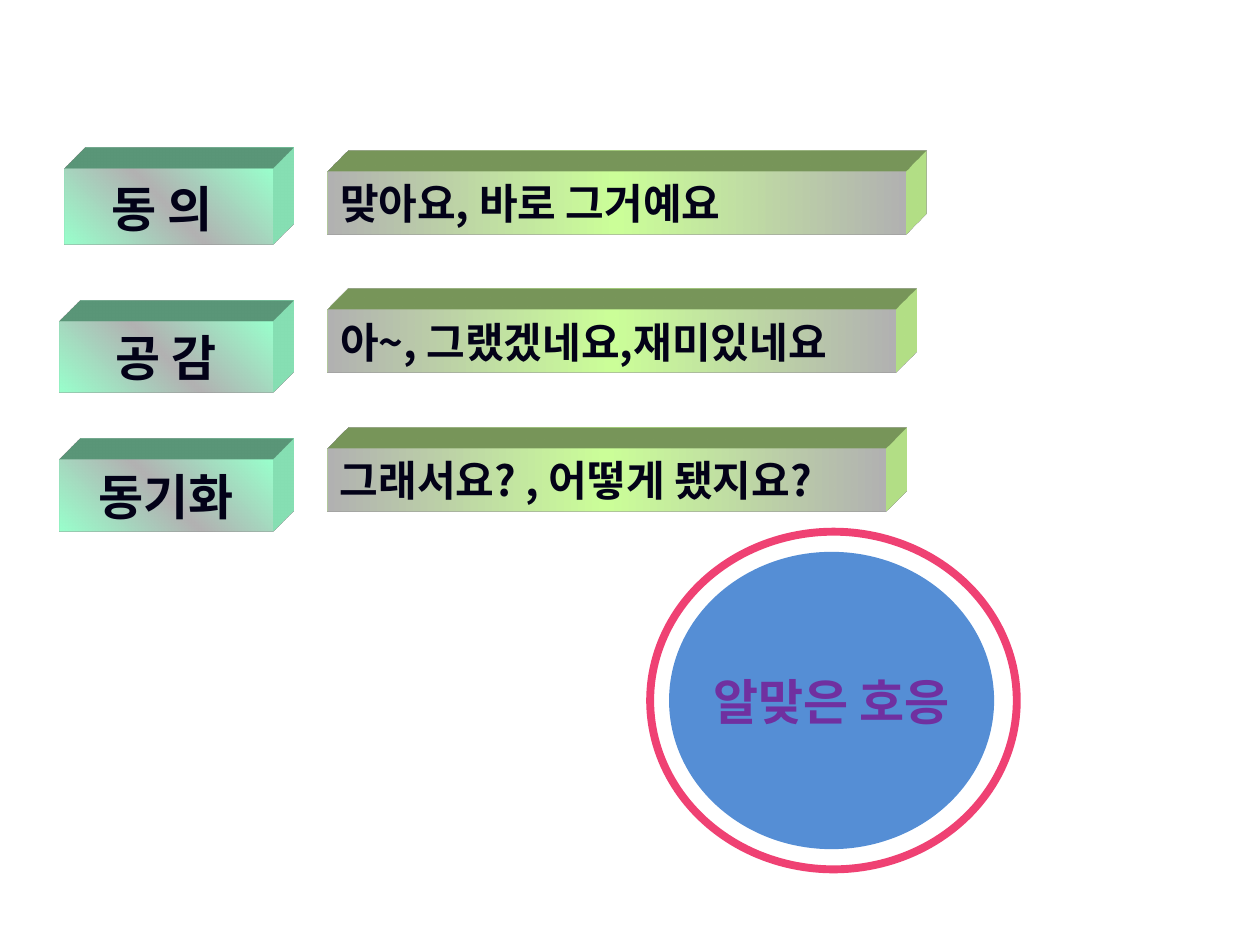
from dataclasses import dataclass

from lxml.etree import SubElement
from pptx import Presentation
from pptx.dml.color import RGBColor
from pptx.enum.shapes import MSO_SHAPE
from pptx.enum.text import MSO_ANCHOR, PP_ALIGN
from pptx.oxml import parse_xml
from pptx.oxml.ns import nsdecls, qn
from pptx.util import Inches, Pt


@dataclass(frozen=True)
class Theme:
    font: str = "Noto Sans CJK KR"
    ink: str = "030218"
    mint: str = "99FFCC"
    lime: str = "CCFF99"
    grey: str = "B2B2B2"
    disc: str = "558ED5"
    ring: str = "EF4173"
    disc_text: str = "7030A0"
    label_size: int = 28
    spacer_size: int = 30
    phrase_size: int = 24
    ring_width: float = 4.5


THEME = Theme()
COLUMNS, ROWS = 100, 75
CELL = Inches(10) // COLUMNS
LABEL_RIGHT = 21.6
PHRASE_LEFT, PHRASE_TOP, PHRASE_STEP, PHRASE_HEIGHT = 26, 13.6, 11, 5
# label, its left, top and height, phrase, width of the phrase bar
RESPONSES = [
    ("동 의", 5.1, 13.4, 6, "맞아요, 바로 그거예요", 45.9),
    ("공 감", 4.7, 25.5, 5.7, "아~, 그랬겠네요,재미있네요", 45.1),
    ("동기화", 4.7, 36.5, 5.7, "그래서요? , 어떻게 됐지요?", 44.3),
]


def add_plain_shape(slide, kind, left, top, width, height):
    """Add a shape without line or shadow; lengths are in grid cells."""
    cells = (left, top, width, height)
    shape = slide.shapes.add_shape(kind, *(round(n * CELL) for n in cells))
    shape.shadow.inherit = False
    shape.line.fill.background()
    return shape


def write_text(shape, text, size, color, align, wrap=True):
    frame = shape.text_frame
    frame.word_wrap = wrap
    frame.vertical_anchor = MSO_ANCHOR.MIDDLE
    frame.margin_top = frame.margin_bottom = 0
    paragraph = frame.paragraphs[0]
    paragraph.alignment = align
    paragraph.add_run().text = text
    font = paragraph.font
    font.name, font.size, font.bold = THEME.font, Pt(size), True
    font.color.rgb = RGBColor.from_string(color)
    properties = paragraph._p.pPr.find(qn("a:defRPr"))
    SubElement(properties, qn("a:ea"), typeface=THEME.font)
    return paragraph


def fill_gradient(shape, edge, middle, degrees):
    """Fill with a gradient that runs from edge to middle and back."""
    stops = "".join(
        f'<a:gs pos="{position}"><a:srgbClr val="{color}"/></a:gs>'
        for position, color in ((0, edge), (50000, middle), (100000, edge))
    )
    gradient = parse_xml(
        f'<a:gradFill {nsdecls("a")} rotWithShape="1"><a:gsLst>{stops}</a:gsLst>'
        f'<a:lin ang="{degrees * 60000}" scaled="1"/></a:gradFill>'
    )
    shape._element.spPr.find(qn("a:prstGeom")).addnext(gradient)


def extrude(shape, color):
    """Turn the shape into a block seen from its top right."""
    properties = shape._element.spPr
    scene = SubElement(properties, qn("a:scene3d"))
    SubElement(scene, qn("a:camera"), prst="legacyObliqueTopRight")
    SubElement(scene, qn("a:lightRig"), rig="legacyFlat3", dir="b")
    block = SubElement(properties, qn("a:sp3d"), extrusionH="430200",
                       prstMaterial="legacyMatte")
    for bevel in ("a:bevelT", "a:bevelB"):
        SubElement(block, qn(bevel), w="13500", h="13500", prst="angle")
    side = SubElement(block, qn("a:extrusionClr"))
    SubElement(side, qn("a:srgbClr"), val=color)


def add_block(slide, bounds, edge, middle, degrees, side):
    shape = add_plain_shape(slide, MSO_SHAPE.RECTANGLE, *bounds)
    fill_gradient(shape, edge, middle, degrees)
    extrude(shape, side)
    return shape


def add_label(slide, text, left, top, height):
    bounds = (left, top, LABEL_RIGHT - left, height)
    block = add_block(slide, bounds, THEME.mint, THEME.grey, 315, THEME.mint)
    return write_text(block, text, THEME.label_size, THEME.ink, PP_ALIGN.CENTER)


def add_phrase(slide, text, row, width):
    bounds = (PHRASE_LEFT, PHRASE_TOP + row * PHRASE_STEP, width, PHRASE_HEIGHT)
    block = add_block(slide, bounds, THEME.grey, THEME.lime, 0, THEME.lime)
    write_text(block, text, THEME.phrase_size, THEME.ink, PP_ALIGN.LEFT)


def add_ringed_disc(slide, text):
    disc = add_plain_shape(slide, MSO_SHAPE.OVAL, 53.1, 43.8, 25.8, 23.6)
    disc.fill.solid()
    disc.fill.fore_color.rgb = RGBColor.from_string(THEME.disc)
    write_text(disc, text, THEME.label_size, THEME.disc_text,
               PP_ALIGN.CENTER, wrap=False)
    ring = add_plain_shape(slide, MSO_SHAPE.OVAL, 51.6, 42.2, 29.1, 26.8)
    ring.fill.background()
    ring.line.color.rgb = RGBColor.from_string(THEME.ring)
    ring.line.width = Pt(THEME.ring_width)


def main():
    presentation = Presentation()
    presentation.slide_width = COLUMNS * CELL
    presentation.slide_height = ROWS * CELL
    slide = presentation.slides.add_slide(presentation.slide_layouts[6])
    add_ringed_disc(slide, "알맞은 호응")
    labels = [add_label(slide, *response[:4]) for response in RESPONSES]
    spacer = labels[0].add_run()
    spacer.text = " "
    spacer.font.size = Pt(THEME.spacer_size)
    for row, (*_, phrase, width) in enumerate(RESPONSES):
        add_phrase(slide, phrase, row, width)
    presentation.save("out.pptx")


if __name__ == "__main__":
    main()
